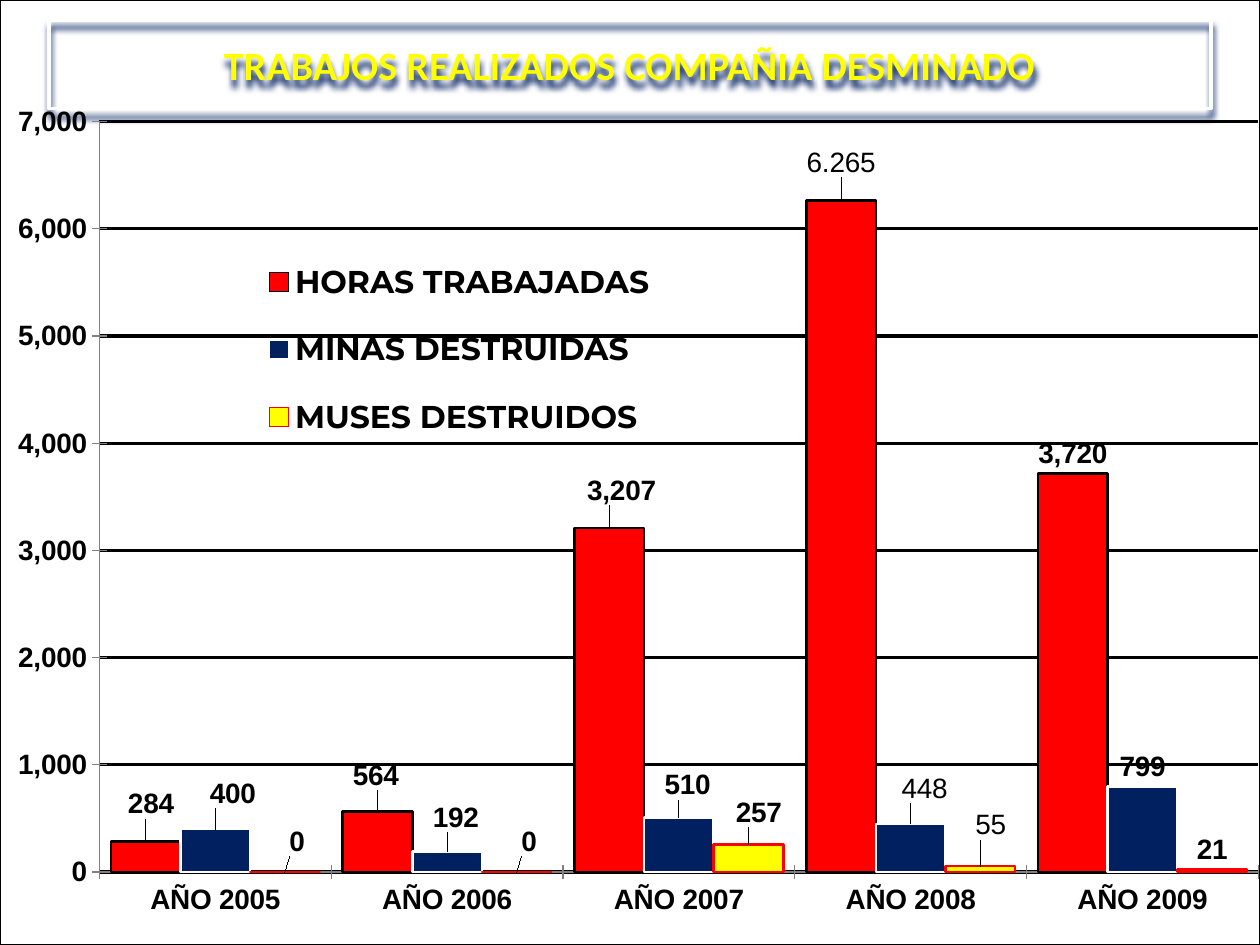
from lxml import etree
from pptx import Presentation
from pptx import util as u
from pptx.chart.data import CategoryChartData
from pptx.dml.color import RGBColor
from pptx.enum import chart as ch, shapes, text
from pptx.oxml import parse_xml
from pptx.oxml.ns import nsdecls, qn

Pt = u.Pt
W, H = 720, 540
CHART_BOX = (0, 50.4, 720, 489.6)
YEARS = [f"AÑO {y}" for y in range(2005, 2010)]
# name, values, fill, line, label offsets in points, typed label of 2008
SERIES = [
    ("HORAS TRABAJADAS", (284, 564, 3207, 6265, 3720), "FF0000", "000000",
     ((3, -10), (-1, -9), (7, -10), (0, -10)), "6.265"),
    ("MINAS DESTRUIDAS", (400, 192, 510, 448, 799), "002060", "FFFFFF",
     ((10, -9), (5, -8), (5, -7), (8, -9)), "448"),
    ("MUSES DESTRUIDOS", (0, 0, 257, 55, 21), "FFFF00", "FF0000",
     ((7, -6), (7, -6), (6, -7), (6, -12)), "55"),
]
TYPED_YEAR = 3


def rgb(value):
    return RGBColor.from_string(value)


def set_layout(parent, index, x, y, w=None, h=None, inner=False):
    """Give a chart part a manual layout, in fractions of the chart."""
    for old in parent.findall(qn("c:layout")):
        parent.remove(old)
    layout = etree.Element(qn("c:layout"))
    manual = etree.SubElement(layout, qn("c:manualLayout"))
    values = [("x", x), ("y", y)]
    if inner:
        values.insert(0, ("layoutTarget", "inner"))
    if w is not None:
        at = len(values) - 2
        values[at:at] = [("xMode", "edge"), ("yMode", "edge")]
        values += [("w", w), ("h", h)]
    for tag, value in values:
        etree.SubElement(manual, qn(f"c:{tag}")).set("val", str(value))
    parent.insert(index, layout)


class Deck:
    title_font, body_font, legend_font = "Calibri", "Arial", "Montserrat"
    title_size, label_size, legend_size = 23, 16, 18

    def __init__(self):
        self.prs = Presentation()
        self.prs.slide_width, self.prs.slide_height = Pt(W), Pt(H)
        self.s = self.prs.slides.add_slide(self.prs.slide_layouts[5])
        fill = self.s.background.fill
        fill.solid()
        fill.fore_color.rgb = rgb("0066FF")

    def font(self, font, name, size, bold=True, color="000000"):
        font.name, font.size, font.bold = name, Pt(size), bold
        font.color.rgb = rgb(color)

    def paint(self, fmt, fill, line, width):
        fmt.fill.solid()
        fmt.fill.fore_color.rgb = rgb(fill)
        fmt.line.color.rgb = rgb(line)
        fmt.line.width = Pt(width)

    def backdrop(self):
        """White page rectangle, sent behind everything."""
        sp = self.s.shapes.add_shape(shapes.MSO_SHAPE.RECTANGLE,
                                     0, 0, Pt(W), Pt(H))
        sp.shadow.inherit = False
        self.paint(sp, "FFFFFF", "000000", 0.75)
        self.s.shapes._spTree.insert(2, sp._element)

    def title(self, words, x, y, w, h):
        sp = self.s.shapes.title
        sp.left, sp.top, sp.width, sp.height = map(Pt, (x, y, w, h))
        sp._element.spPr.append(parse_xml(
            f'<a:prstGeom {nsdecls("a")} prst="roundRect"><a:avLst/></a:prstGeom>'))
        sp.fill.background()
        sp.line.color.rgb = rgb("FFFFFF")
        sp.line.width = Pt(2)
        sp._element.spPr.append(parse_xml(
            f'<a:effectLst {nsdecls("a")}><a:outerShdw blurRad="{Pt(4)}" '
            f'dist="{Pt(4)}" dir="5400000" algn="t" rotWithShape="0">'
            '<a:srgbClr val="002060"/></a:outerShdw></a:effectLst>'))
        tf = sp.text_frame
        tf.text = words
        tf.word_wrap = True
        tf.auto_size = text.MSO_AUTO_SIZE.NONE
        tf.vertical_anchor = text.MSO_ANCHOR.MIDDLE
        p = tf.paragraphs[0]
        p.alignment = text.PP_ALIGN.CENTER
        self.font(p.font, self.title_font, self.title_size, color="FFFF00")

    def axis(self, axis):
        axis.major_tick_mark = ch.XL_TICK_MARK.CROSS
        axis.format.line.color.rgb = rgb("808080")
        axis.format.line.width = Pt(0.75)
        self.font(axis.tick_labels.font, self.body_font, self.label_size)

    def point_label(self, point, offset, words=None):
        label = point.data_label
        if words:
            p = label.text_frame.paragraphs[0]
            r = p.add_run()
            r.text = words
            self.font(r.font, self.body_font, self.label_size, bold=False)
        else:
            self.font(label.font, self.body_font, self.label_size)
        label.position = ch.XL_LABEL_POSITION.OUTSIDE_END
        dx, dy = offset
        set_layout(label._dLbl, 1, round(dx / CHART_BOX[2], 4),
                   round(dy / CHART_BOX[3], 4))

    def series(self, ser, fill, line, offsets, typed):
        self.paint(ser.format, fill, line, 1.5)
        ser.invert_if_negative = False
        labels = ser.data_labels
        labels.show_value = True
        labels.position = ch.XL_LABEL_POSITION.OUTSIDE_END
        self.font(labels.font, self.body_font, self.label_size)
        for i, offset in enumerate(offsets):
            self.point_label(ser.points[i], offset,
                             typed if i == TYPED_YEAR else None)

    def chart(self):
        data = CategoryChartData(number_format="#,##0")
        data.categories = YEARS
        for name, values, *_ in SERIES:
            data.add_series(name, values)
        chart = self.s.shapes.add_chart(
            ch.XL_CHART_TYPE.COLUMN_CLUSTERED, *map(Pt, CHART_BOX), data).chart
        chart.has_title = False
        self.font(chart.font, self.title_font, 18, bold=False)

        self.axis(chart.category_axis)
        axis = chart.value_axis
        self.axis(axis)
        axis.minimum_scale, axis.maximum_scale, axis.major_unit = 0, 7000, 1000
        axis.tick_labels.number_format = "#,##0"
        axis.tick_labels.number_format_is_linked = False
        grid = axis.major_gridlines.format.line
        grid.color.rgb = rgb("000000")
        grid.width = Pt(1.75)

        plot = chart.plots[0]
        plot.gap_width, plot.overlap, plot.vary_by_categories = 33, 0, False
        for ser, (_, _, *style) in zip(plot.series, SERIES):
            self.series(ser, *style)
        set_layout(chart._chartSpace.chart.plotArea, 0,
                   0.079, 0.039, 0.921, 0.876, inner=True)

        chart.has_legend = True
        legend = chart.legend
        legend.position = ch.XL_LEGEND_POSITION.RIGHT
        legend.include_in_layout = False
        self.font(legend.font, self.legend_font, self.legend_size)
        set_layout(legend._element, 1, 0.2, 0.17, 0.33, 0.27)


def main():
    deck = Deck()
    deck.backdrop()
    deck.title("TRABAJOS REALIZADOS COMPAÑIA DESMINADO", 28, 11.5, 664, 50.5)
    deck.chart()
    deck.prs.save("out.pptx")


if __name__ == "__main__":
    main()
